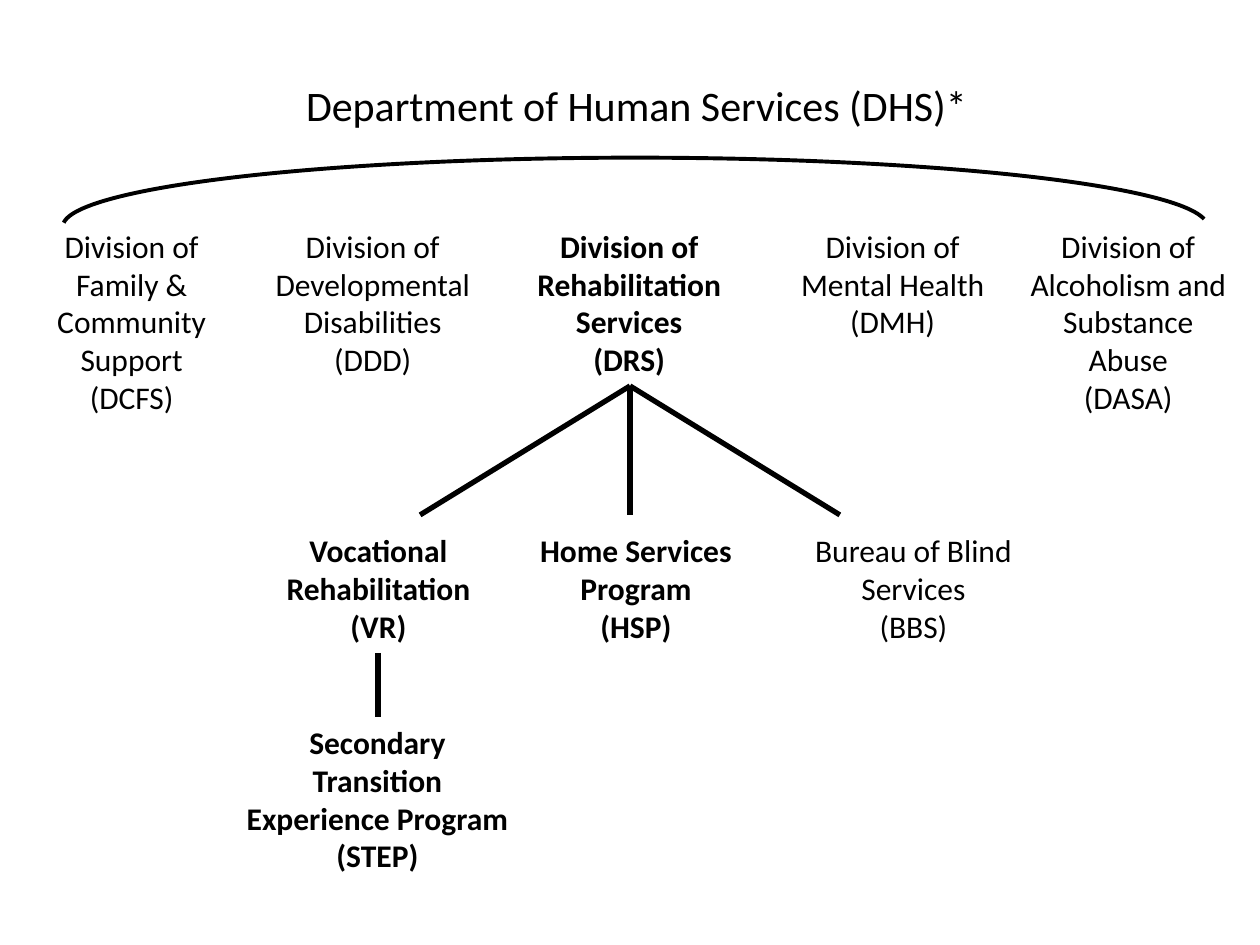
from lxml import etree
from pptx import Presentation
from pptx.dml.color import RGBColor
from pptx.enum.shapes import MSO_CONNECTOR, MSO_SHAPE
from pptx.enum.text import MSO_AUTO_SIZE, PP_ALIGN
from pptx.oxml.ns import qn
from pptx.util import Cm, Pt

STRAIGHT = MSO_CONNECTOR.STRAIGHT
ARC = MSO_SHAPE.ARC
CENTER = PP_ALIGN.CENTER
FIT_SHAPE = MSO_AUTO_SIZE.SHAPE_TO_FIT_TEXT

COLORS = {"ink": "000000"}
FONT = "Calibri"
ARC_UNITS_PER_DEGREE = 0.6  # 60000 units a degree, scaled by 100000

# left, width, height, name, abbreviation, bold
DIVISIONS = [
    (0.43, 4.45, 4.11, "Division of Family & Community Support", "(DCFS)", False),
    (5.28, 4.47, 3.33, "Division of Developmental Disabilities", "(DDD)", False),
    (10.36, 4.65, 3.33, "Division of Rehabilitation Services", "(DRS)", True),
    (15.67, 4.65, 2.56, "Division of Mental Health", "(DMH)", False),
    (20.52, 4.45, 4.11, "Division of Alcoholism and Substance Abuse", "(DASA)", False),
]
PROGRAMS = [
    (5.46, 4.34, 2.56, "Vocational Rehabilitation", "(VR)", True),
    (9.96, 5.72, 2.56, "Home Services Program", "(HSP)", True),
    (16.08, 4.67, 2.56, "Bureau of Blind Services", "(BBS)", False),
]
STEP = [
    (4.65, 5.92, 3.33, "Secondary Transition Experience Program", "(STEP)", True),
]


def ink():
    return RGBColor.from_string(COLORS["ink"])


def add_text(s, x, y, w, h, lines, size, bold=False, align=None, wrap=True):
    tf = s.shapes.add_textbox(Cm(x), Cm(y), Cm(w), Cm(h)).text_frame
    tf.text = "\n".join(lines)
    tf.word_wrap = wrap
    tf.auto_size = FIT_SHAPE
    for p in tf.paragraphs:
        p.alignment = align
        for r in p.runs:
            r.font.name = FONT
            r.font.size = Pt(size)
            r.font.bold = bold
            r.font.color.rgb = ink()


def add_line(s, x1, y1, x2, y2):
    line = s.shapes.add_connector(STRAIGHT, Cm(x1), Cm(y1), Cm(x2), Cm(y2))
    line.line.color.rgb = ink()
    line.line.width = Pt(3)
    etree.SubElement(line._element.spPr, qn("a:effectLst"))


def add_department(s, x, y, w):
    """Title with the arc that spans all divisions."""
    add_text(s, x + 4.65, y, 13.97, 2.31,
             ["Department of Human Services (DHS)*"], 24, wrap=False)
    arc = s.shapes.add_shape(ARC, Cm(x), Cm(y + 1.7), Cm(w), Cm(2.77))
    for i, degrees in enumerate((180.37, 359.26)):
        arc.adjustments[i] = degrees * ARC_UNITS_PER_DEGREE
    arc.shadow.inherit = False
    arc.fill.background()
    arc.line.color.rgb = ink()
    arc.line.width = Pt(2.25)


def add_units(s, y, units):
    """One row of units, aligned at the top."""
    for x, w, h, name, short, bold in units:
        add_text(s, x, y, w, h, [name, short], 18, bold, CENTER)


def add_branches(s, x, y, spread, drop):
    """Three lines that fan out from one point."""
    for dx in (-spread, 0, spread):
        add_line(s, x, y, x + dx, y + drop)


def main():
    prs = Presentation()
    prs.slide_width, prs.slide_height = Cm(25.4), Cm(19.05)
    s = prs.slides.add_slide(prs.slide_layouts[6])
    add_department(s, 1.27, 1.48, 23.07)
    add_units(s, 4.45, DIVISIONS)
    add_branches(s, 12.7, 7.78, 4.23, 2.6)
    add_units(s, 10.58, PROGRAMS)
    add_line(s, 7.62, 13.16, 7.62, 14.45)
    add_units(s, 14.45, STEP)
    prs.save("out.pptx")


if __name__ == "__main__":
    main()
